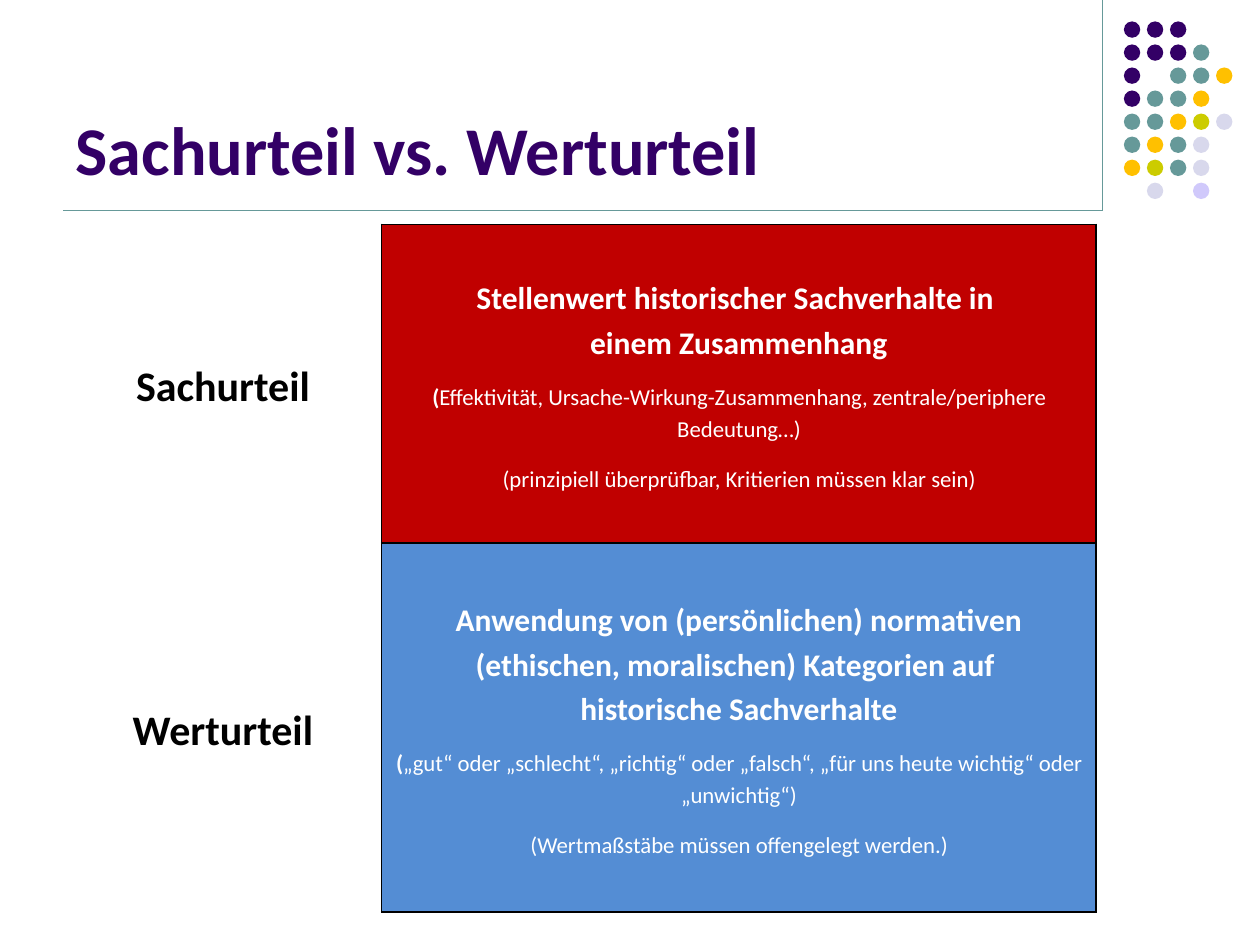
"""Build the slide comparing Sachurteil and Werturteil."""
from lxml.etree import SubElement
from pptx import Presentation
from pptx.dml.color import RGBColor
from pptx.enum.shapes import MSO_CONNECTOR, MSO_SHAPE
from pptx.enum.text import MSO_ANCHOR, PP_ALIGN
from pptx.oxml.ns import qn
from pptx.util import Inches, Pt


def paint(fill, color):
    fill.solid()
    fill.fore_color.rgb = RGBColor.from_string(color)


def add_run(paragraph, text, size, color, bold=True):
    run = paragraph.add_run()
    run.text = text
    run.font.name = "Calibri"
    run.font.size = Pt(size)
    run.font.bold = bold
    paint(run.font.fill, color)


prs = Presentation()
prs.slide_width, prs.slide_height = Inches(10), Inches(7.5)
slide = prs.slides.add_slide(prs.slide_layouts[5])

rule_x, rule_y = Inches(8.75), Inches(1.67)
for start_x, start_y in [(rule_x, 0), (Inches(0.5), rule_y)]:
    rule = slide.shapes.add_connector(MSO_CONNECTOR.STRAIGHT, start_x, start_y, rule_x, rule_y)
    paint(rule.line.fill, "669999")
    rule.line.width = Pt(0.75)
    SubElement(rule.element.spPr, qn("a:effectLst"))

dot_colors = {"P": "330066", "T": "669999", "G": "FFC000",
              "O": "CCCC00", "L": "D8D8EC", "V": "D0C9FB"}
dot_rows = ["PPP", "PPPT", "P TTG", "PTTG", "TTGOL", "TGTL", "GOTL", " L V"]
dot_pitch, dot_size = 1.28 / 7, Inches(0.13)
for row, pattern in enumerate(dot_rows):
    for column, code in enumerate(pattern):
        if code == " ":
            continue
        dot = slide.shapes.add_shape(
            MSO_SHAPE.OVAL, Inches(8.92 + column * dot_pitch),
            Inches(0.17 + row * dot_pitch), dot_size, dot_size)
        dot.shadow.inherit = False
        paint(dot.fill, dot_colors[code])
        dot.line.fill.background()

title = slide.shapes.title
title.left, title.top, title.width, title.height = map(Inches, (0.5, 0.13, 8.25, 1.42))
title.text_frame.vertical_anchor = MSO_ANCHOR.BOTTOM
heading = title.text_frame.paragraphs[0]
heading.alignment = PP_ALIGN.LEFT
add_run(heading, "Sachurteil vs. Werturteil", 39, "330066")

judgements = [
    ("Sachurteil", "C00000", 2.53,
     ["Stellenwert historischer Sachverhalte in ", "einem Zusammenhang"],
     "Effektivität, Ursache-Wirkung-Zusammenhang, zentrale/periphere Bedeutung…)",
     "(prinzipiell überprüfbar, Kritierien müssen klar sein)"),
    ("Werturteil", "548DD4", 2.93,
     ["Anwendung von (persönlichen) normativen (ethischen, moralischen) Kategorien auf ",
      "historische Sachverhalte"],
     "„gut“ oder „schlecht“, „richtig“ oder „falsch“, „für uns heute wichtig“ oder „unwichtig“)",
     "(Wertmaßstäbe müssen offengelegt werden.)"),
]
table = slide.shapes.add_table(
    len(judgements), 2, Inches(0.51), Inches(1.78), Inches(8.19), Inches(5.46)).table
table.first_row = table.horz_banding = False
table.columns[0].width, table.columns[1].width = Inches(2.52), Inches(5.67)

for row, (label, color, height, definition, examples, remark) in enumerate(judgements):
    table.rows[row].height = Inches(height)
    label_cell, meaning_cell = table.cell(row, 0), table.cell(row, 1)

    add_run(label_cell.text_frame.paragraphs[0], label, 24, "000000")
    meaning = meaning_cell.text_frame
    definition_line = meaning.paragraphs[0]
    add_run(definition_line, definition[0], 18, "FFFFFF")
    definition_line.add_line_break()
    add_run(definition_line, definition[1], 18, "FFFFFF")
    examples_line = meaning.add_paragraph()
    add_run(examples_line, "(", 13, "FFFFFF")
    add_run(examples_line, examples, 13, "FFFFFF", False)
    add_run(meaning.add_paragraph(), remark, 13, "FFFFFF", False)

    for cell, background, edges, space_after in [
            (label_cell, "FFFFFF", ["lnR"], 0),
            (meaning_cell, color, ["lnL", "lnR", "lnT", "lnB"], 10)]:
        cell.vertical_anchor = MSO_ANCHOR.MIDDLE
        cell.margin_left = cell.margin_right = Inches(0.05)
        cell.margin_top = cell.margin_bottom = 0
        for paragraph in cell.text_frame.paragraphs:
            paragraph.alignment = PP_ALIGN.CENTER
            paragraph.line_spacing = 1.15
            paragraph.space_after = Pt(space_after)
        properties = cell._tc.get_or_add_tcPr()
        for edge in edges:
            border = SubElement(properties, qn(f"a:{edge}"), w=str(Pt(1)))
            SubElement(SubElement(border, qn("a:solidFill")), qn("a:srgbClr"), val="000000")
        paint(cell.fill, background)

prs.save("out.pptx")
